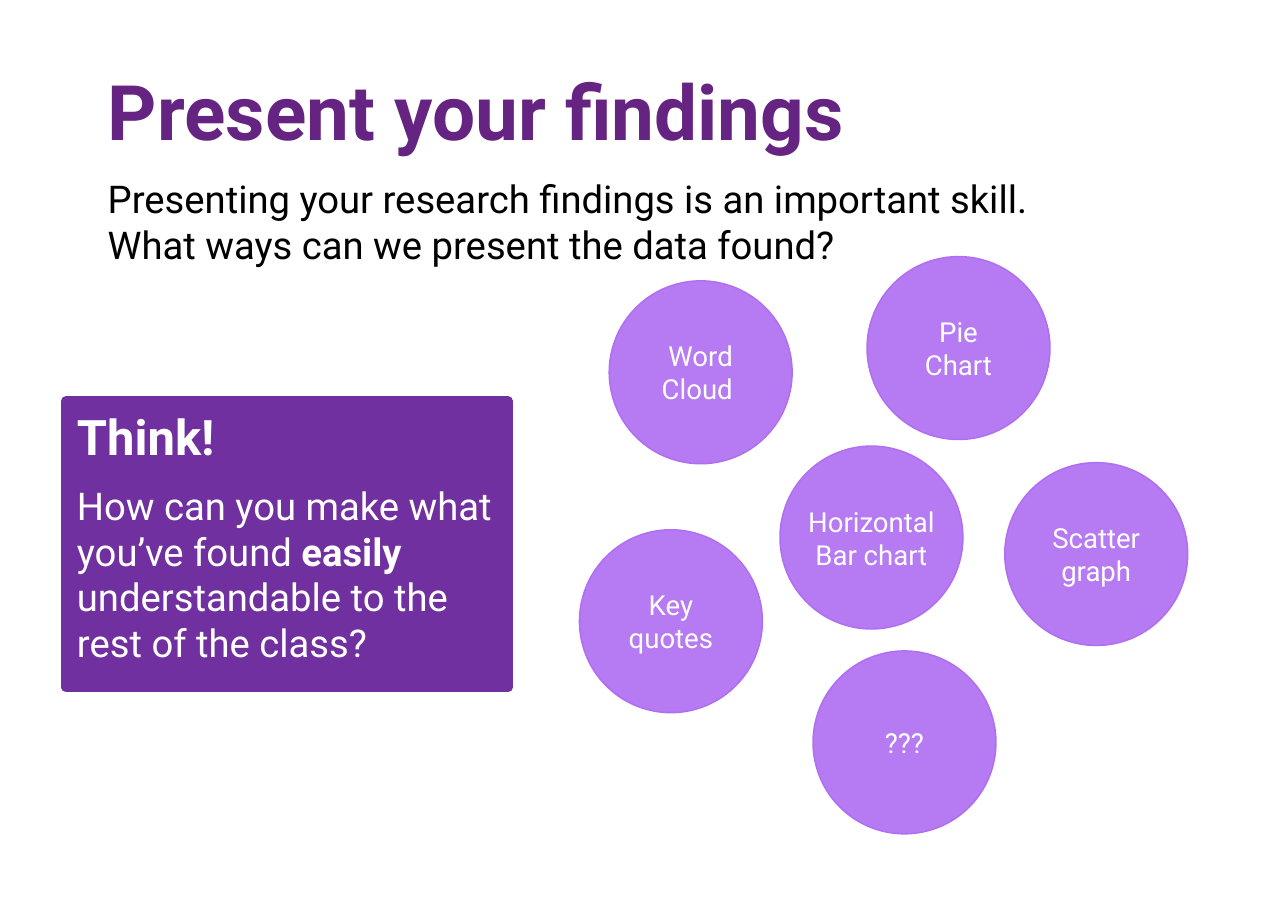
from lxml import etree
from pptx import Presentation
from pptx.dml.color import RGBColor
from pptx.enum import shapes, text
from pptx.oxml.ns import qn
from pptx.util import Inches, Pt

FONT = "Roboto"
WHITE, BLACK = "FFFFFF", "000000"
TITLE_PURPLE, BOX_PURPLE, BUBBLE_PURPLE = "662482", "7030A0", "B06FF1"

TITLE = "Present your findings"
INTRO = ("Presenting your research findings is an important skill. "
         "What ways can we present the data found?")
THINK_HEADING = "Think!"
THINK_QUESTION = [  # text, bold
    ("How can you make what you’ve found ", False),
    ("easily ", True),
    ("understandable to the rest of the class?", False),
]

BUBBLE_SIZE = 1.66
BUBBLE_OPACITY = 92
BUBBLES = [  # label, left, top, inner margin
    ("Horizontal Bar chart", 7.08, 4.05, 0),
    ("Pie Chart", 7.87, 2.33, 0.1),
    ("Scatter graph", 9.12, 4.2, 0.1),
    ("Word Cloud ", 5.53, 2.55, 0.1),
    ("Key quotes", 5.26, 4.81, 0.1),
    ("???", 7.38, 5.91, 0),
]


def color(value):
    return RGBColor.from_string(value)


def format_runs(paragraph, size, value, bold=False):
    for run in paragraph.runs:
        run.font.name = FONT
        run.font.size = Pt(size)
        run.font.bold = bold
        run.font.color.rgb = color(value)


def add_filled_shape(slide, kind, box, value, line_width):
    shape = slide.shapes.add_shape(kind, *map(Inches, box))
    shape.shadow.inherit = False
    shape.fill.solid()
    shape.fill.fore_color.rgb = color(value)
    shape.line.color.rgb = color(value)
    shape.line.width = Pt(line_width)
    shape.text_frame.word_wrap = True
    return shape


def add_title(slide):
    title = slide.shapes.title
    title.left, title.top, title.width, title.height = map(
        Inches, (0.88, 0.56, 9.94, 0.92))
    frame = title.text_frame
    frame.text = TITLE
    frame.auto_size = text.MSO_AUTO_SIZE.NONE
    frame.vertical_anchor = text.MSO_ANCHOR.BOTTOM
    paragraph = frame.paragraphs[0]
    paragraph.alignment = text.PP_ALIGN.LEFT
    paragraph.line_spacing = 0.9
    format_runs(paragraph, 50, TITLE_PURPLE, bold=True)


def add_intro(slide):
    intro = slide.shapes.add_textbox(*map(Inches, (0.88, 1.54, 8.77, 1.11)))
    frame = intro.text_frame
    frame.word_wrap = True
    frame.text = INTRO
    format_runs(frame.paragraphs[0], 25, BLACK)


def add_think_box(slide):
    box = add_filled_shape(slide, shapes.MSO_SHAPE.RECTANGLE,
                           (0.6, 3.64, 4.01, 2.6), BOX_PURPLE, 6.25)
    frame = box.text_frame
    frame.vertical_anchor = text.MSO_ANCHOR.TOP
    frame.text = THINK_HEADING
    heading, question = frame.paragraphs[0], frame.add_paragraph()
    format_runs(heading, 32, WHITE, bold=True)
    for words, _ in THINK_QUESTION:
        question.add_run().text = words
    format_runs(question, 25, WHITE)
    for run, (_, bold) in zip(question.runs, THINK_QUESTION):
        run.font.bold = bold
    question.space_before = Pt(11)
    for paragraph in frame.paragraphs:
        paragraph.alignment = text.PP_ALIGN.LEFT


def add_bubble(slide, label, left, top, margin):
    bubble = add_filled_shape(slide, shapes.MSO_SHAPE.OVAL,
                              (left, top, BUBBLE_SIZE, BUBBLE_SIZE),
                              BUBBLE_PURPLE, 1)
    # Slightly transparent fill
    fill_color = bubble._element.spPr.find(qn("a:solidFill"))[0]
    alpha = etree.SubElement(fill_color, qn("a:alpha"))
    alpha.set("val", str(BUBBLE_OPACITY * 1000))

    frame = bubble.text_frame
    frame.margin_left = frame.margin_right = Inches(margin)
    frame.margin_top = frame.margin_bottom = Inches(margin / 2)
    frame.vertical_anchor = text.MSO_ANCHOR.MIDDLE
    frame.text = label
    frame.paragraphs[0].alignment = text.PP_ALIGN.CENTER
    format_runs(frame.paragraphs[0], 18, WHITE)


def main():
    presentation = Presentation()
    presentation.slide_width = Inches(11.69)
    presentation.slide_height = Inches(8.27)
    slide = presentation.slides.add_slide(presentation.slide_layouts[5])
    add_title(slide)
    add_intro(slide)
    add_think_box(slide)
    for bubble in BUBBLES:
        add_bubble(slide, *bubble)
    presentation.save("out.pptx")


if __name__ == "__main__":
    main()
